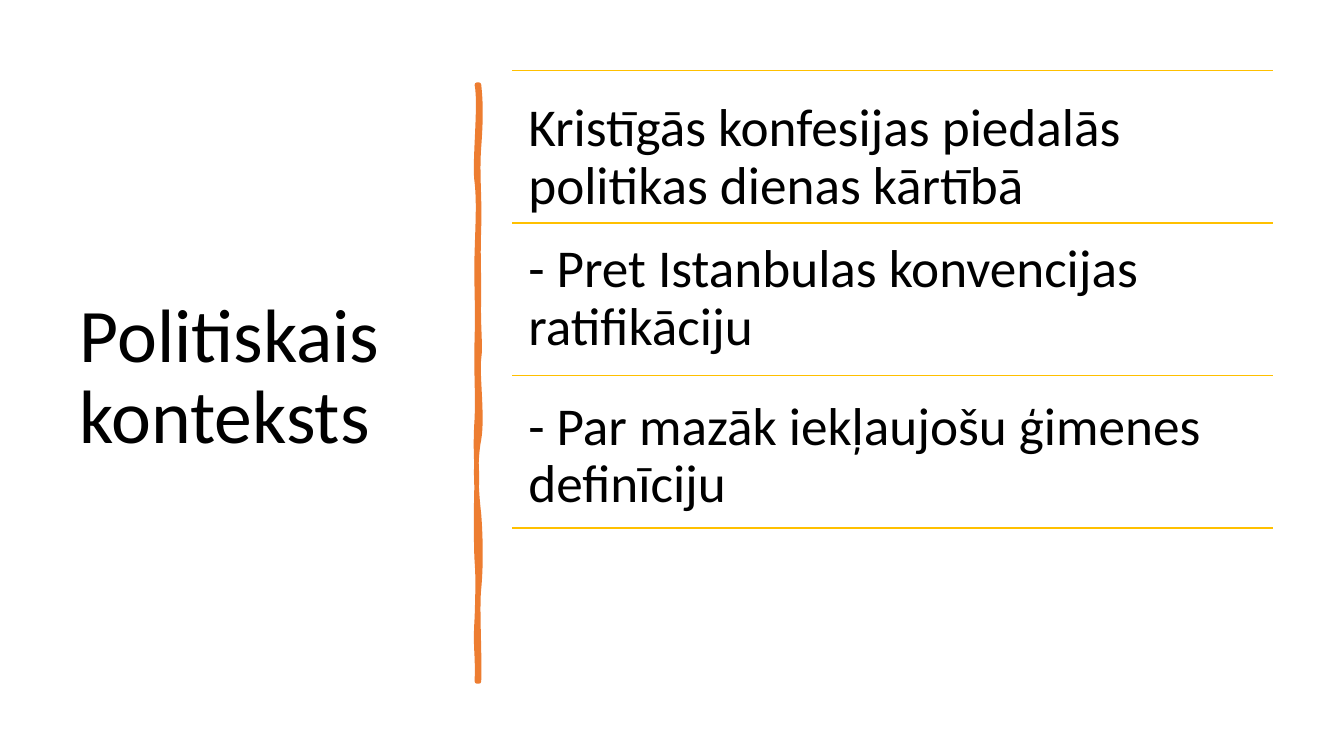
from lxml import etree
from pptx import Presentation
from pptx.dml.color import RGBColor
from pptx.enum import shapes, text
from pptx.oxml.ns import qn
from pptx.util import Inches, Pt

TITLE = "Politiskais konteksts"
POINTS = [
    ("Kristīgās konfesijas piedalās politikas dienas kārtībā", 0.84),
    ("- Pret Istanbulas konvencijas ratifikāciju", 2.24),
    ("- Par mazāk iekļaujošu ģimenes definīciju", 3.8),
]
FONT = "Calibri"
BLACK = RGBColor(0x00, 0x00, 0x00)
ORANGE = RGBColor(0xED, 0x7D, 0x31)
GOLD = RGBColor(0xFF, 0xC0, 0x00)

LIST_LEFT, LIST_TOP, LIST_WIDTH, LIST_HEIGHT = 5.08, 0.7, 7.55, 4.54
ROW_HEIGHT = LIST_HEIGHT / len(POINTS)
INSET = 0.16
BRUSH_START = (4.75, 0.84)
BRUSH_LEFT = 4.73
BRUSH_CURVES = [
    (4.77, 1.02, 4.77, 1.19, 4.75, 1.46), (4.73, 1.73, 4.76, 1.95, 4.75, 2.26),
    (4.74, 2.57, 4.75, 2.62, 4.75, 2.94), (4.74, 3.25, 4.77, 3.42, 4.75, 3.56),
    (4.73, 3.7, 4.79, 4.14, 4.75, 4.36), (4.71, 4.57, 4.72, 4.84, 4.75, 5.1),
    (4.77, 5.36, 4.77, 5.64, 4.75, 5.84), (4.73, 6.03, 4.76, 6.5, 4.75, 6.76),
    (4.74, 6.76, 4.73, 6.76, 4.73, 6.76), (4.74, 6.46, 4.71, 6.44, 4.73, 6.13),
    (4.74, 5.83, 4.74, 5.7, 4.73, 5.57), (4.72, 5.44, 4.72, 4.95, 4.73, 4.77),
    (4.73, 4.59, 4.71, 4.45, 4.73, 4.15), (4.74, 3.86, 4.72, 3.73, 4.73, 3.35),
    (4.74, 2.98, 4.72, 2.81, 4.73, 2.5), (4.74, 2.18, 4.75, 2, 4.73, 1.81),
    (4.7, 1.63, 4.77, 1.04, 4.73, 0.84), (4.74, 0.84, 4.74, 0.84, 4.75, 0.84),
]
UNITS_PER_INCH = 1000


def units(length):
    return round(length * UNITS_PER_INCH)


def bend_segments(brush):
    segments = list(brush._element.iter(qn("a:lnTo")))
    for segment, curve in zip(segments, BRUSH_CURVES):
        segment.tag = qn("a:cubicBezTo")
        for index, start in enumerate((0, 2)):
            point = etree.Element(qn("a:pt"))
            point.set("x", str(units(curve[start] - BRUSH_LEFT)))
            point.set("y", str(units(curve[start + 1] - BRUSH_START[1])))
            segment.insert(index, point)


def add_brush(page):
    start_x, start_y = (units(value) for value in BRUSH_START)
    builder = page.shapes.build_freeform(start_x, start_y, scale=Inches(1) / UNITS_PER_INCH)
    ends = [(units(curve[4]), units(curve[5])) for curve in BRUSH_CURVES]
    builder.add_line_segments(ends, close=True)
    brush = builder.convert_to_shape()
    bend_segments(brush)
    brush.shadow.inherit = False
    brush.fill.solid()
    brush.fill.fore_color.rgb = ORANGE
    brush.line.color.rgb = ORANGE
    brush.line.width = Pt(3.25)
    line = brush._element.spPr.find(qn("a:ln"))
    line.set("cap", "rnd")
    etree.SubElement(line, qn("a:round"))


def add_rule(group, top):
    rule = group.shapes.add_connector(
        shapes.MSO_CONNECTOR.STRAIGHT,
        Inches(LIST_LEFT), Inches(top), Inches(LIST_LEFT + LIST_WIDTH), Inches(top),
    )
    rule.line.color.rgb = GOLD
    rule.line.width = Pt(1)
    etree.SubElement(rule._element.spPr, qn("a:effectLst"))


def write(box, wording, size, anchor):
    frame = box.text_frame
    frame.text = wording
    frame.word_wrap = True
    frame.auto_size = text.MSO_AUTO_SIZE.NONE
    frame.vertical_anchor = anchor
    para = frame.paragraphs[0]
    para.alignment = text.PP_ALIGN.LEFT
    para.line_spacing = 0.9
    font = para.runs[0].font
    font.name, font.size, font.color.rgb = FONT, Pt(size), BLACK


def add_point(group, wording, top):
    box = group.shapes.add_textbox(
        Inches(LIST_LEFT), Inches(top), Inches(LIST_WIDTH), Inches(ROW_HEIGHT)
    )
    write(box, wording, 38, text.MSO_ANCHOR.TOP)
    frame = box.text_frame
    frame.margin_left = frame.margin_right = Inches(INSET)
    frame.margin_top = frame.margin_bottom = Inches(INSET)


def main():
    deck = Presentation()
    deck.slide_width, deck.slide_height = Inches(13.33), Inches(7.5)
    page = deck.slides.add_slide(deck.slide_layouts[5])

    title = page.shapes.title
    title.left, title.top = Inches(0.69), Inches(0.7)
    title.width, title.height = Inches(3.74), Inches(6.11)
    write(title, TITLE, 54, text.MSO_ANCHOR.MIDDLE)

    add_brush(page)
    group = page.shapes.add_group_shape()
    add_rule(group, LIST_TOP)
    for row, (wording, top) in enumerate(POINTS, start=1):
        add_rule(group, LIST_TOP + row * ROW_HEIGHT)
        add_point(group, wording, top)

    deck.save("out.pptx")


if __name__ == "__main__":
    main()
